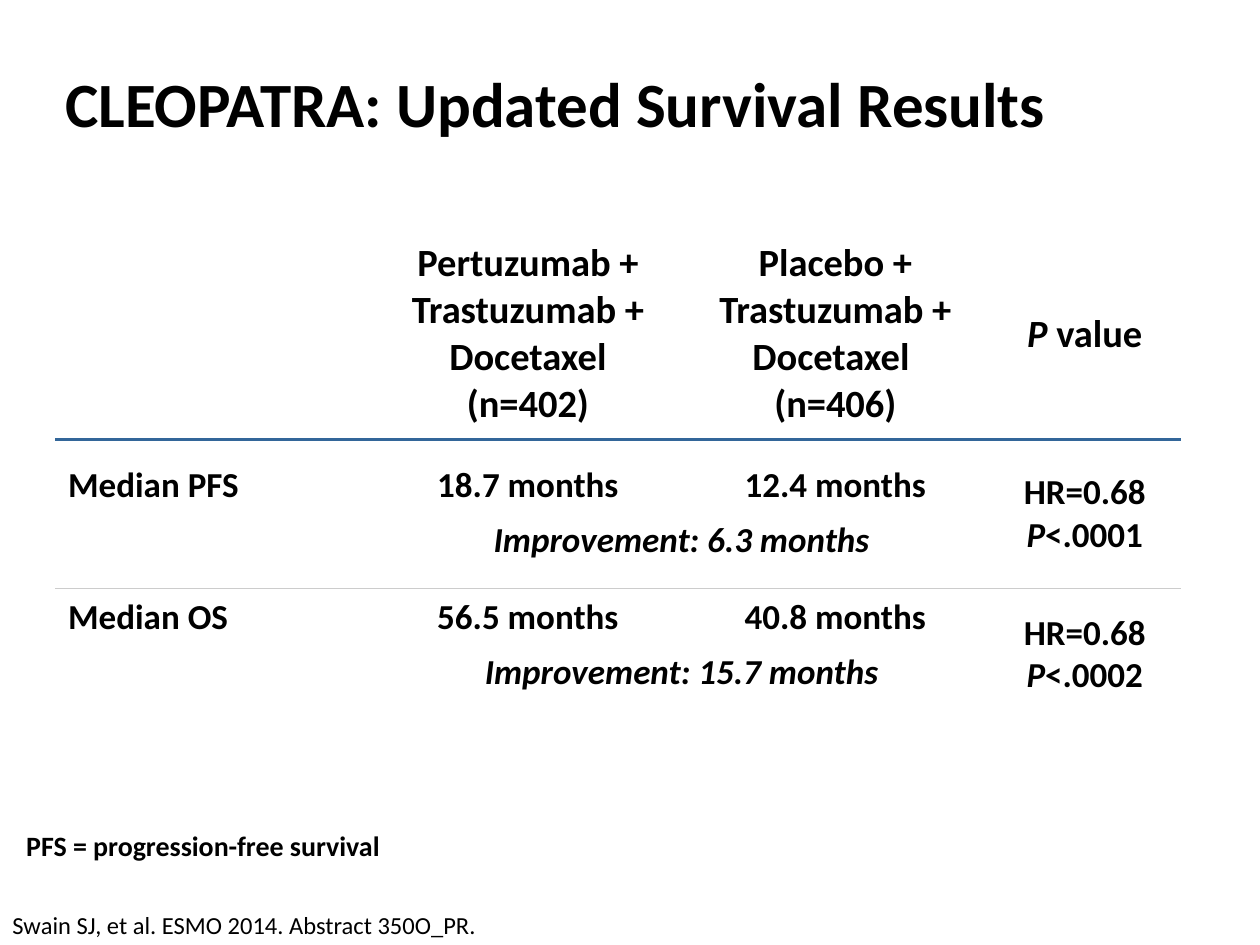
import pptx
import pptx.util
import pptx.dml.color
import pptx.enum.text
import pptx.oxml
import pptx.oxml.ns

Inches = pptx.util.Inches
ALIGN = pptx.enum.text.PP_ALIGN
ANCHOR = pptx.enum.text.MSO_ANCHOR

BLACK, BLUE, GREY = "000000", "336699", "CCCCCC"
COLS = [2.53, 2.44, 2.44, 1.52]
ROWS = [1.68, 0.58, 0.6, 0.45, 0.6]

# Lines of a cell are split by a newline; text between stars is italic
CELLS = [
    ["", "Pertuzumab + Trastuzumab + Docetaxel\n(n=402)",
     "Placebo + Trastuzumab + Docetaxel \n(n=406)", "*P* value"],
    ["Median PFS", "18.7 months", "12.4 months", "HR=0.68\n*P*<.0001"],
    ["", "*Improvement: 6.3 months*", "", ""],
    ["Median OS", "56.5 months", "40.8 months", "HR=0.68\n*P*<.0002"],
    ["", "*Improvement: 15.7 months*", "", ""],
]
ANCHORS = [ANCHOR.MIDDLE, ANCHOR.BOTTOM, ANCHOR.TOP, ANCHOR.BOTTOM, ANCHOR.TOP]

# Row rules: side, colour, width in points
RULES = {
    0: {"B": (BLUE, 2.25)},
    1: {"T": (BLUE, 2.25)},
    2: {"B": (GREY, 0.75)},
    3: {"T": (GREY, 0.75)},
}


def color(code):
    return pptx.dml.color.RGBColor.from_string(code)


def write(frame, text, size, bold=True, align=ALIGN.LEFT):
    for row, line in enumerate(text.split("\n")):
        para = frame.paragraphs[0] if row == 0 else frame.add_paragraph()
        para.alignment = align
        for part, words in enumerate(line.split("*")):
            if not words:
                continue
            run = para.add_run()
            run.text = words
            look = {"name": "Calibri", "size": pptx.util.Pt(size),
                    "bold": bold, "italic": part % 2 == 1}
            for key, value in look.items():
                setattr(run.font, key, value)
            run.font.color.rgb = color(BLACK)


def add_text(slide, place, text, size, bold=True, wrap=False):
    box = slide.shapes.add_textbox(*map(Inches, place))
    frame = box.text_frame
    frame.word_wrap = wrap
    frame.vertical_anchor = ANCHOR.MIDDLE if wrap else ANCHOR.TOP
    write(frame, text, size, bold)


def set_lines(cell, rules):
    props = cell._tc.get_or_add_tcPr()
    space = pptx.oxml.ns.nsdecls("a")
    for spot, side in enumerate("LRTB"):
        if side in rules:
            code, width = rules[side]
            fill = f'<a:solidFill><a:srgbClr val="{code}"/></a:solidFill>'
        else:
            width, fill = 0, "<a:noFill/>"
        line = f'<a:ln{side} {space} w="{pptx.util.Pt(width)}">{fill}</a:ln{side}>'
        props.insert(spot, pptx.oxml.parse_xml(line))


def add_grid(slide):
    place = map(Inches, (0.44, 1.81, sum(COLS), sum(ROWS)))
    table = slide.shapes.add_table(len(ROWS), len(COLS), *place).table
    table.first_row = table.horz_banding = False
    for col, width in zip(table.columns, COLS):
        col.width = Inches(width)
    for row, height in zip(table.rows, ROWS):
        row.height = Inches(height)

    # Cell text, fill and rules
    for r, texts in enumerate(CELLS):
        for c, text in enumerate(texts):
            cell = table.cell(r, c)
            cell.fill.background()
            rules = dict(RULES.get(r, {}))
            if (r, c) == (1, 3):
                rules.update(RULES[2])
            set_lines(cell, rules)
            cell.vertical_anchor = ANCHOR.MIDDLE if c == 3 else ANCHORS[r]
            align = ALIGN.CENTER if c else ALIGN.LEFT
            write(cell.text_frame, text, 20 if r else 22, align=align)

    # Each result pair shares its P value and its improvement
    for top in (1, 3):
        table.cell(top, 3).merge(table.cell(top + 1, 3))
        table.cell(top + 1, 1).merge(table.cell(top + 1, 2))


def main():
    deck = pptx.Presentation()
    deck.slide_width, deck.slide_height = Inches(10), Inches(7.5)
    slide = deck.slides.add_slide(deck.slide_layouts[6])

    # Title
    add_text(slide, (0.42, 0.3, 9.08, 1.03),
             "CLEOPATRA: Updated Survival Results", 36, wrap=True)
    # Source
    add_text(slide, (0, 7.17, 3.91, 0.34),
             "Swain SJ, et al. ESMO 2014. Abstract 350O_PR.", 14, bold=False)
    # Results
    add_grid(slide)
    # Key
    add_text(slide, (0.11, 6.53, 3.05, 0.37),
             "PFS = progression-free survival", 16)

    deck.save("out.pptx")


if __name__ == "__main__":
    main()
